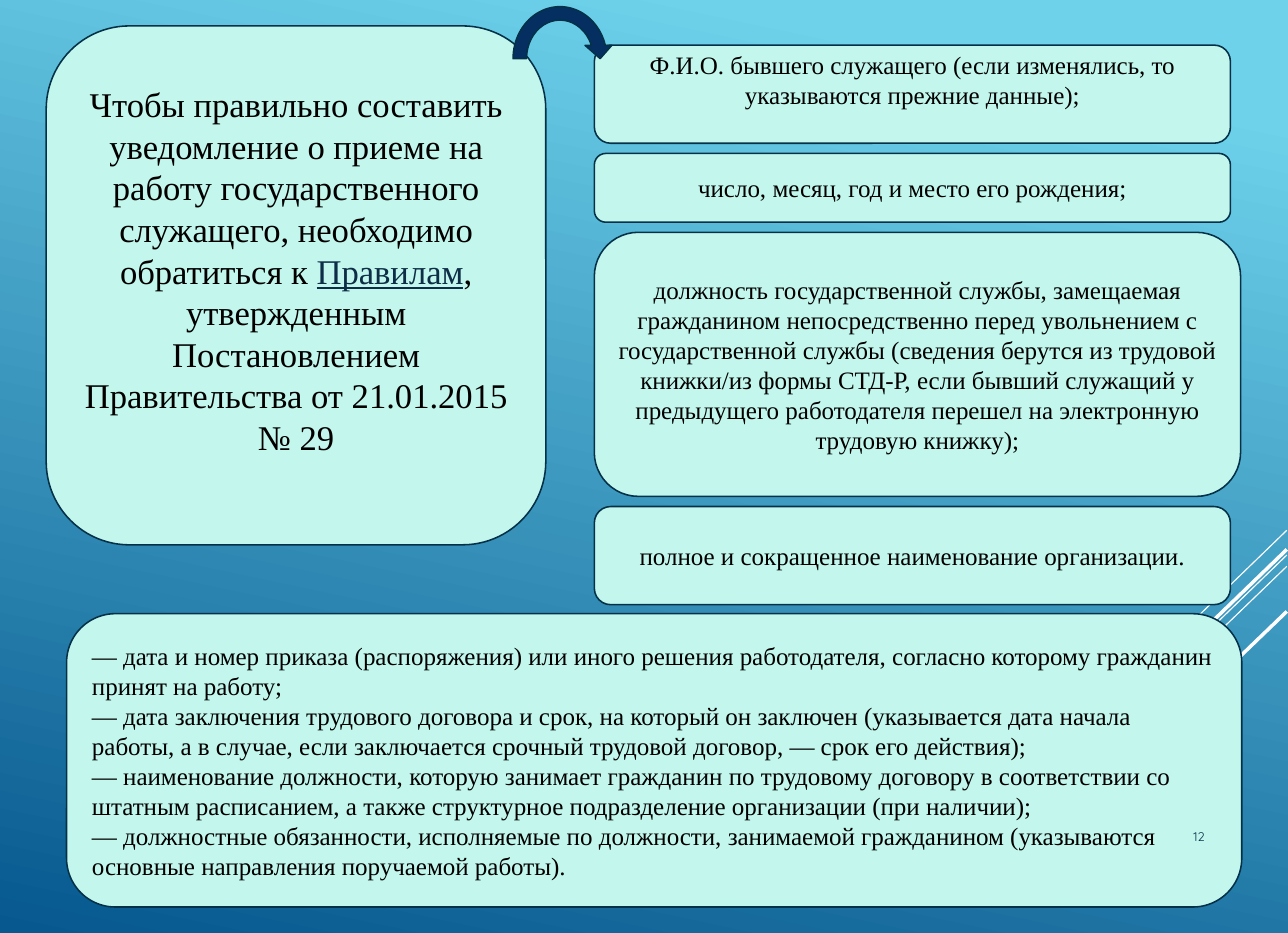
"""Builds the slide on how to draw up a hiring notice for a former civil servant."""
from pptx import Presentation
from pptx.dml.color import RGBColor
from pptx.enum.shapes import MSO_CONNECTOR, MSO_SHAPE
from pptx.enum.text import MSO_ANCHOR, PP_ALIGN
from pptx.oxml.ns import qn
from pptx.util import Inches, Pt
from lxml import etree

ROUND, ARROW = MSO_SHAPE.ROUNDED_RECTANGLE, MSO_SHAPE.CIRCULAR_ARROW
LINE = MSO_CONNECTOR.STRAIGHT
TOP, MID, LOW = MSO_ANCHOR.TOP, MSO_ANCHOR.MIDDLE, MSO_ANCHOR.BOTTOM
LEFT, MIDDLE, RIGHT = PP_ALIGN.LEFT, PP_ALIGN.CENTER, PP_ALIGN.RIGHT
SERIF, SANS = "Times New Roman", "Quicksand"
MINT, EDGE, NAVY, LINK = "C3F7ED", "043148", "052F61", "0D2E46"
BLACK, WHITE, PAGE = "000000", "FFFFFF", "0A304A"

SKY = [("6ED2EB", 0.1), ("06588E", 1)]
RAYS = [
    (4.7, 10.47, 5.61, 0.75),
    (4.92, 8.33, 7.9, 0.75),
    (5.02, 9.45, 6.91, 0.75),
    (4.87, 9.61, 6.61, 2.25),
    (5.42, 10.1, 6.68, 2.25),
]
INTRO = [
    ("Чтобы правильно составить уведомление о приеме на работу государственного "
     "служащего, необходимо обратиться к ", BLACK, False),
    ("Правилам", LINK, True),
    (", утвержденным Постановлением Правительства от 21.01.2015 № 29", BLACK, False),
]
ITEMS = [
    ("Ф.И.О. бывшего служащего (если изменялись, то указываются прежние данные);",
     5.64, 0.87, TOP),
    ("число, месяц, год и место его рождения;", 5.64, 0.61, MID),
    ("должность государственной службы, замещаемая гражданином непосредственно перед "
     "увольнением с государственной службы (сведения берутся из трудовой книжки/из формы "
     "СТД-Р, если бывший служащий у предыдущего работодателя перешел на электронную "
     "трудовую книжку);", 5.73, 2.34, MID),
    ("полное и сокращенное наименование организации.", 5.64, 0.87, MID),
]
DUTIES = [
    "— дата и номер приказа (распоряжения) или иного решения работодателя, согласно "
    "которому гражданин принят на работу;",
    "— дата заключения трудового договора и срок, на который он заключен (указывается дата "
    "начала работы, а в случае, если заключается срочный трудовой договор, — срок его "
    "действия);",
    "— наименование должности, которую занимает гражданин по трудовому договору в "
    "соответствии со штатным расписанием, а также структурное подразделение организации "
    "(при наличии);",
    "— должностные обязанности, исполняемые по должности, занимаемой гражданином "
    "(указываются основные направления поручаемой работы).",
]


def paint(color, hue):
    color.rgb = RGBColor.from_string(hue)


def draw(kind, x, y, w, h, hue):
    shape = slide.shapes.add_shape(kind, Inches(x), Inches(y), Inches(w), Inches(h))
    shape.shadow.inherit = False
    shape.fill.solid()
    paint(shape.fill.fore_color, hue)
    paint(shape.line.color, EDGE)
    shape.line.width = Pt(1)
    return shape


def label(x, y, w, h):
    return slide.shapes.add_textbox(Inches(x), Inches(y), Inches(w), Inches(h))


def write(shape, lines, size, align, anchor=MID, font=SERIF, hue=BLACK):
    frame = shape.text_frame
    frame.word_wrap = True
    frame.vertical_anchor = anchor
    frame.text = "\n".join(lines)
    for par in frame.paragraphs:
        par.alignment = align
        par.font.name, par.font.size = font, Pt(size)
        paint(par.font.color, hue)
    return frame


deck = Presentation()
deck.slide_width, deck.slide_height = Inches(11.42), Inches(8.27)
slide = deck.slides.add_slide(deck.slide_layouts[6])

back = slide.background.fill
back.gradient()
back.gradient_angle = 258
for stop, (hue, place) in zip(back.gradient_stops, SKY):
    paint(stop.color, hue)
    stop.position = place

for y, x2, y2, width in RAYS:
    ray = slide.shapes.add_connector(LINE, Inches(11.41), Inches(y), Inches(x2), Inches(y2))
    paint(ray.line.color, WHITE)
    ray.line.width = Pt(width)
    etree.SubElement(ray._element.spPr, qn("a:effectLst"))

draw(ROUND, 0.41, 0.23, 4.43, 4.6, MINT)
frame = write(label(0.5, 0.67, 4.25, 3.45), [""], 22.1, MIDDLE)
frame.margin_left = frame.margin_right = Inches(0.11)
for text, hue, under in INTRO:
    run = frame.paragraphs[0].add_run()
    run.text = text
    run.font.underline = under
    paint(run.font.color, hue)

y = 0.4
for text, w, h, anchor in ITEMS:
    frame = write(draw(ROUND, 5.27, y, w, h, MINT), [text], 16, MIDDLE, anchor)
    if anchor == TOP:
        frame.margin_top = 0
    y += h + 0.09

write(draw(ROUND, 0.59, 5.44, 10.42, 2.6, MINT), DUTIES, 16, LEFT)
draw(ARROW, 4.49, 0, 0.95, 1.04, NAVY)
write(label(9.71, 6.72, 1.07, 0.81), ["12"], 8, RIGHT, LOW, SANS, PAGE)

deck.save("out.pptx")
